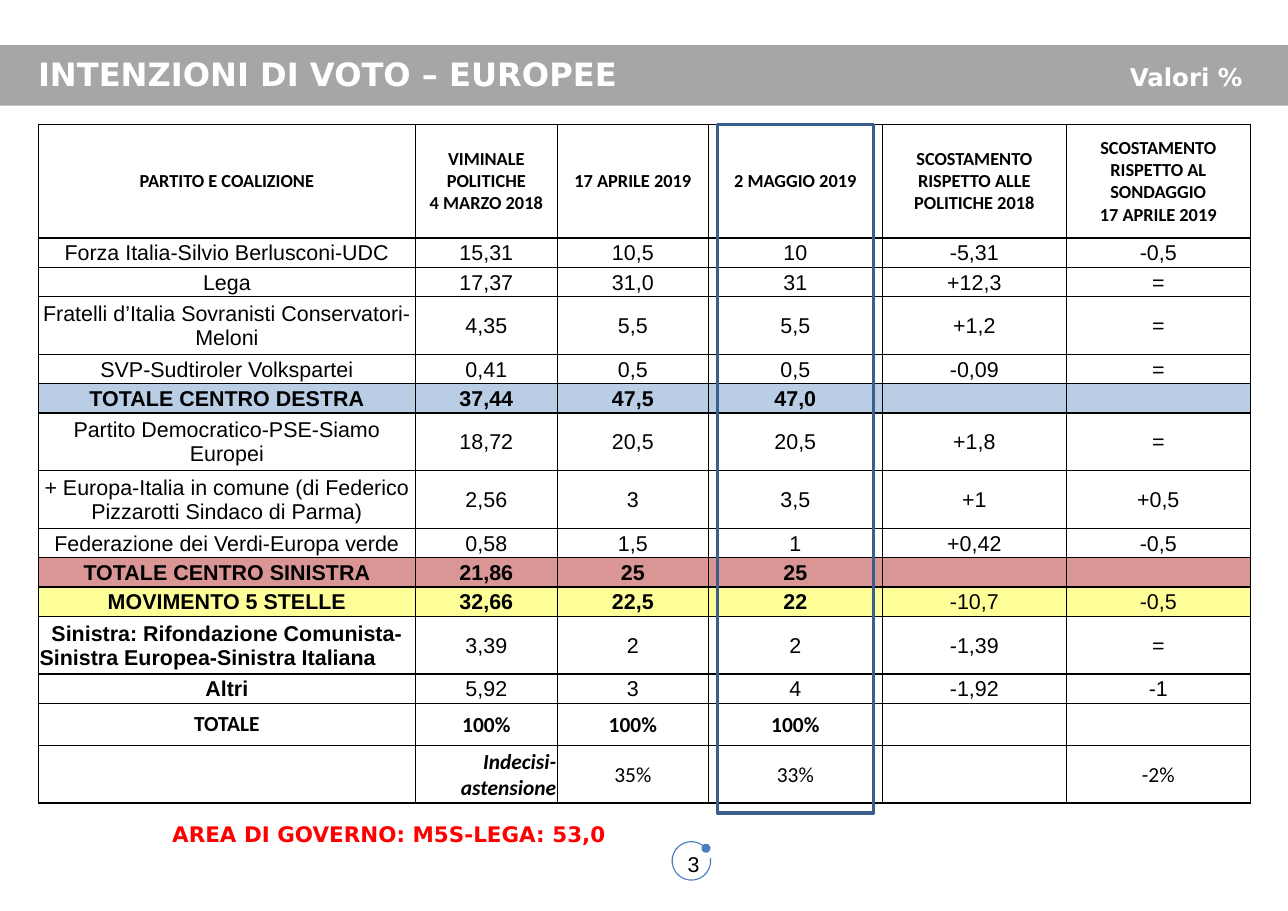
from lxml.etree import SubElement
from pptx import Presentation
from pptx.dml.color import RGBColor
from pptx.enum.shapes import MSO_SHAPE as Shape
from pptx.enum.text import MSO_ANCHOR as Anchor, PP_ALIGN as Align
from pptx.oxml.ns import qn
from pptx.util import Pt

BLACK = RGBColor(0x00, 0x00, 0x00)
WHITE = RGBColor(0xFF, 0xFF, 0xFF)
GREY = RGBColor(0xA6, 0xA6, 0xA6)
RED = RGBColor(0xFF, 0x00, 0x00)
RIGHT_BLUE = RGBColor(0xB9, 0xCD, 0xE5)
LEFT_RED = RGBColor(0xD9, 0x96, 0x94)
YELLOW = RGBColor(0xFF, 0xFF, 0x99)
FRAME_BLUE = RGBColor(0x3A, 0x5F, 0x8C)
ARC_BLUE = RGBColor(0x4B, 0x7E, 0xBC)

SANS, ARIAL, CALIBRI = "DejaVu Sans", "Arial", "Calibri"
HEADER, SINGLE, DOUBLE, TOTAL = 74.2, 19.2, 37.7, 27.4  # row heights

# Content: row height, fill, font, number of leading bold cells, cell texts
COLUMNS = [246.2, 92.9, 98.6, 113.8, 120.2, 120.2]
ROWS = [
    (HEADER, None, CALIBRI, 6,
     ["PARTITO E COALIZIONE", "VIMINALE\nPOLITICHE\n4 MARZO 2018", "17 APRILE 2019",
      "2 MAGGIO 2019", "SCOSTAMENTO RISPETTO ALLE POLITICHE 2018",
      "SCOSTAMENTO RISPETTO AL SONDAGGIO\n17 APRILE 2019"]),
    (SINGLE, None, ARIAL, 0,
     ["Forza Italia-Silvio Berlusconi-UDC", "15,31", "10,5", "10", "-5,31", "-0,5"]),
    (SINGLE, None, ARIAL, 0, ["Lega", "17,37", "31,0", "31", "+12,3", "="]),
    (DOUBLE, None, ARIAL, 0,
     ["Fratelli d’Italia Sovranisti Conservatori-Meloni", "4,35", "5,5", "5,5", "+1,2", "="]),
    (SINGLE, None, ARIAL, 0,
     ["SVP-Sudtiroler Volkspartei", "0,41", "0,5", "0,5", "-0,09", "="]),
    (SINGLE, RIGHT_BLUE, ARIAL, 4,
     ["TOTALE CENTRO DESTRA", "37,44", "47,5", "47,0", "", ""]),
    (DOUBLE, None, ARIAL, 0,
     ["Partito Democratico-PSE-Siamo Europei", "18,72", "20,5", "20,5", "+1,8", "="]),
    (DOUBLE, None, ARIAL, 0,
     ["+ Europa-Italia in comune (di Federico Pizzarotti Sindaco di Parma)",
      "2,56", "3", "3,5", "+1", "+0,5"]),
    (SINGLE, None, ARIAL, 0,
     ["Federazione dei Verdi-Europa verde", "0,58", "1,5", "1", "+0,42", "-0,5"]),
    (SINGLE, LEFT_RED, ARIAL, 4,
     ["TOTALE CENTRO SINISTRA", "21,86", "25", "25", "", ""]),
    (SINGLE, YELLOW, ARIAL, 4,
     ["MOVIMENTO 5 STELLE", "32,66", "22,5", "22", "-10,7", "-0,5"]),
    (DOUBLE, None, ARIAL, 1,
     ["Sinistra: Rifondazione Comunista-Sinistra Europea-Sinistra Italiana\t",
      "3,39", "2", "2", "-1,39", "="]),
    (SINGLE, None, ARIAL, 1, ["Altri", "5,92", "3", "4", "-1,92", "-1"]),
    (TOTAL, WHITE, CALIBRI, 4, ["TOTALE", "100%", "100%", "100%", "", ""]),
    (DOUBLE, WHITE, CALIBRI, 2, ["", "Indecisi-astensione", "35%", "33%", "", "-2%"]),
]
UNDECIDED = "Indecisi-astensione"

# Content: text, left, top, width, height, size, font, colour, bold, alignment
LABELS = [
    ("INTENZIONI DI VOTO – EUROPEE", 17.3, 31.7, 809.3, 34.6, 21, SANS, WHITE, True, Align.LEFT),
    ("Valori %", 730.8, 36.7, 110.9, 27.4, 16, SANS, WHITE, True, Align.LEFT),
    ("3", 355, 544.3, 196.6, 41, 14, ARIAL, BLACK, False, Align.CENTER),
    ("AREA DI GOVERNO: M5S-LEGA: 53,0", -131, 531.4, 770.4, 23.8, 14, SANS, RED, True,
     Align.CENTER),
]


def add_span(para, text, size, font, colour, bold, italic=False):
    span = para.add_run()
    span.text = text
    span.font.size, span.font.name = Pt(size), font
    span.font.bold, span.font.italic = bold, italic
    span.font.color.rgb = colour


def add_shape(page, kind, left, top, width, height, fill=None, line=None, weight=1):
    shape = page.shapes.add_shape(kind, Pt(left), Pt(top), Pt(width), Pt(height))
    shape.shadow.inherit = False
    if fill is None:
        shape.fill.background()
    else:
        shape.fill.solid()
        shape.fill.fore_color.rgb = fill
    if line is None:
        shape.line.fill.background()
    else:
        shape.line.color.rgb = line
        shape.line.width = Pt(weight)
    return shape


def add_label(page, text, left, top, width, height, size, font, colour, bold, align):
    box = page.shapes.add_textbox(Pt(left), Pt(top), Pt(width), Pt(height))
    frame = box.text_frame
    frame.word_wrap = True
    frame.margin_left = frame.margin_right = Pt(7.6)
    para = frame.paragraphs[0]
    para.alignment = align
    add_span(para, text, size, font, colour, bold)
    return box


def add_borders(cell):
    properties = cell._tc.get_or_add_tcPr()
    for side in ("a:lnL", "a:lnR", "a:lnT", "a:lnB"):
        line = SubElement(properties, qn(side), w=str(Pt(1)))
        fill = SubElement(line, qn("a:solidFill"))
        SubElement(fill, qn("a:srgbClr"), val=str(BLACK))


def set_margins(cell, left, top, right, bottom):
    cell.margin_left, cell.margin_top = Pt(left), Pt(top)
    cell.margin_right, cell.margin_bottom = Pt(right), Pt(bottom)


def fill_cell(cell, text, size, font, bold, fill):
    add_borders(cell)
    if fill is None:
        cell.fill.background()
    else:
        cell.fill.solid()
        cell.fill.fore_color.rgb = fill
    cell.vertical_anchor = Anchor.MIDDLE
    frame = cell.text_frame
    for number, line in enumerate(text.split("\n")):
        para = frame.add_paragraph() if number else frame.paragraphs[0]
        para.alignment = Align.RIGHT if text == UNDECIDED else Align.CENTER
        if line:
            add_span(para, line, size, font, BLACK, bold, text == UNDECIDED)
        else:
            SubElement(para._p, qn("a:endParaRPr"), sz=str(size * 100))


def add_poll_table(page):
    height = sum(row[0] for row in ROWS)
    table = page.shapes.add_table(len(ROWS), len(COLUMNS), Pt(25.2), Pt(81.4),
                                  Pt(sum(COLUMNS)), Pt(height)).table
    table.first_row = table.horz_banding = False
    for column, width in zip(table.columns, COLUMNS):
        column.width = Pt(width)
    for r, (height, fill, font, bold_count, texts) in enumerate(ROWS):
        table.rows[r].height = Pt(height)
        for c, text in enumerate(texts):
            cell = table.cell(r, c)
            if c == 0 and height in (HEADER, TOTAL):
                set_margins(cell, 6.5, 4.3, 6.5, 4.3)
            elif height == HEADER:
                set_margins(cell, 4.3, 5, 4.3, 5)
            else:
                set_margins(cell, 0.7, 0.7, 0.7, 0)
            fill_cell(cell, text, 12 if height == HEADER else 14, font, c < bold_count, fill)


def main():
    deck = Presentation()
    deck.slide_width, deck.slide_height = Pt(841.68), Pt(595.44)
    page = deck.slides.add_slide(deck.slide_layouts[6])

    # Ring around the page number, ending in a dot
    ring = add_shape(page, Shape.ARC, 439.2, 550.1, 25.2, 25.2, line=ARC_BLUE, weight=0.75)
    ring.rotation = 81.2
    ring.adjustments[0], ring.adjustments[1] = 162, 142.69
    SubElement(ring.line._get_or_add_ln(), qn("a:tailEnd"), type="oval")

    # Title band and labels
    add_shape(page, Shape.RECTANGLE, 0, 29.5, 841.68, 39.6, fill=GREY)
    title, unit, number, government = [add_label(page, *label) for label in LABELS]
    number.text_frame.vertical_anchor = Anchor.MIDDLE
    government.text_frame.paragraphs[0].line_spacing = 1.1

    # Poll table with the latest survey framed
    add_poll_table(page)
    add_shape(page, Shape.RECTANGLE, 468.7, 81.4, 102.2, 450, line=FRAME_BLUE, weight=2)

    deck.save("out.pptx")


if __name__ == "__main__":
    main()
